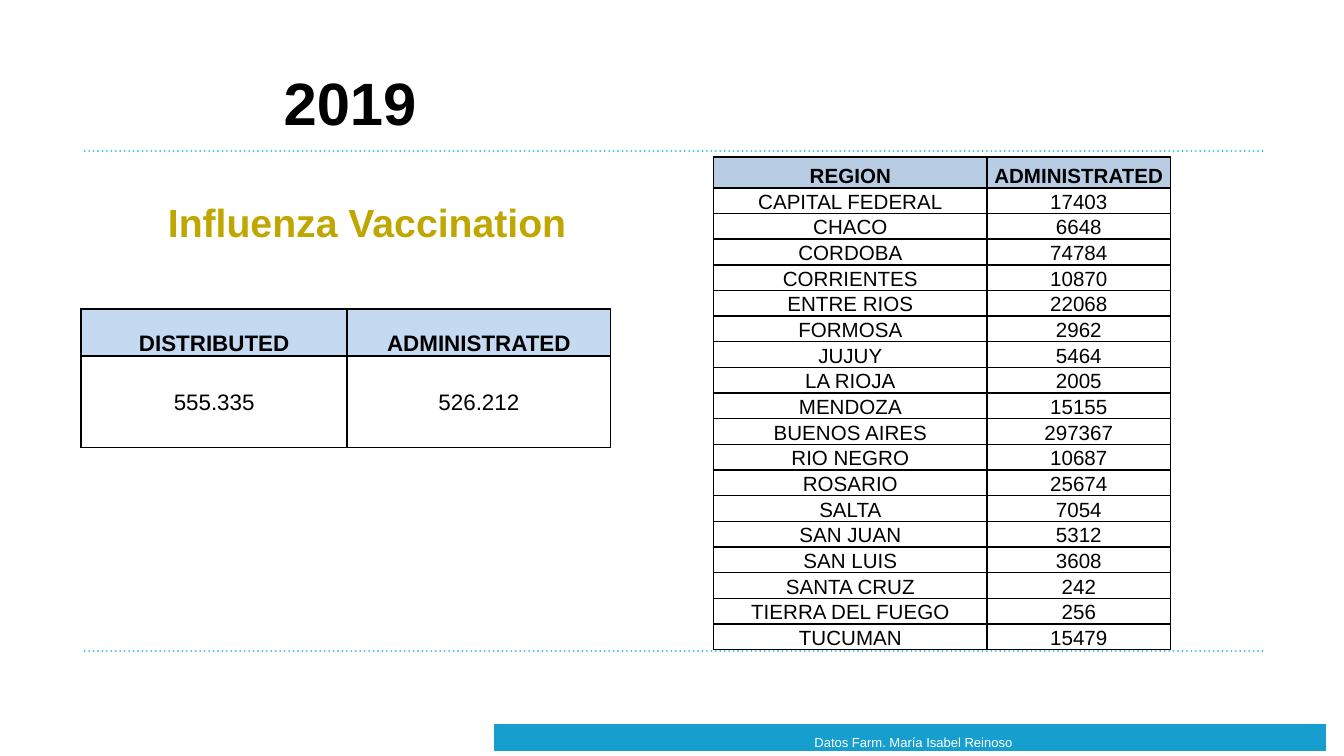
from lxml import etree
from pptx import Presentation
from pptx import util as u
from pptx.dml import color
from pptx.enum import dml, shapes, text
from pptx.oxml import ns

COLORS = {
    "rule": "45C0EB", "gold": "BFA600", "ink": "000000", "paper": "FFFFFF",
    "totals": "C5D9F1", "regions": "B8CCE4", "bar": "169ECE",
}
FONT = "Arial"
WIDTH = u.Inches(10)
HEIGHT = WIDTH * 9 // 16
GRID = WIDTH / 100

TOTALS = [("DISTRIBUTED", "ADMINISTRATED"), ("555.335", "526.212")]
REGIONS = [
    ("REGION", "ADMINISTRATED"),
    ("CAPITAL FEDERAL", "17403"), ("CHACO", "6648"), ("CORDOBA", "74784"),
    ("CORRIENTES", "10870"), ("ENTRE RIOS", "22068"), ("FORMOSA", "2962"),
    ("JUJUY", "5464"), ("LA RIOJA", "2005"), ("MENDOZA", "15155"),
    ("BUENOS AIRES", "297367"), ("RIO NEGRO", "10687"), ("ROSARIO", "25674"),
    ("SALTA", "7054"), ("SAN JUAN", "5312"), ("SAN LUIS", "3608"),
    ("SANTA CRUZ", "242"), ("TIERRA DEL FUEGO", "256"), ("TUCUMAN", "15479"),
]


def units(*lengths):
    return [round(length * GRID) for length in lengths]


def rgb(name):
    return color.RGBColor.from_string(COLORS[name])


def paint(target, name):
    target.fill.solid()
    target.fill.fore_color.rgb = rgb(name)


def write(paragraph, words, size, ink, bold=False):
    run = paragraph.add_run()
    run.text = words
    run.font.name, run.font.size, run.font.bold = FONT, u.Pt(size), bold
    run.font.color.rgb = rgb(ink)


def add_rule(slide, left, top, width):
    x, y, span = units(left, top, width)
    rule = slide.shapes.add_connector(shapes.MSO_CONNECTOR.STRAIGHT, x, y, x + span, y)
    rule.line.color.rgb = rgb("rule")
    rule.line.width = u.Pt(1.2)
    rule.line.dash_style = dml.MSO_LINE.ROUND_DOT
    rule._element.spPr.find(ns.qn("a:ln")).set("cap", "rnd")
    etree.SubElement(rule._element.spPr, ns.qn("a:effectLst"))


def add_year(slide, box):
    year = slide.shapes.title
    year.left, year.top, year.width, year.height = units(*box)
    paint(year, "paper")
    frame = year.text_frame
    frame.word_wrap = False
    frame.auto_size = text.MSO_AUTO_SIZE.SHAPE_TO_FIT_TEXT
    frame.vertical_anchor = text.MSO_ANCHOR.TOP
    frame.paragraphs[0].alignment = text.PP_ALIGN.LEFT
    write(frame.paragraphs[0], "2019", 32, "ink", True)


def add_subject(slide, box):
    frame = slide.shapes.add_textbox(*units(*box)).text_frame
    frame.word_wrap = False
    frame.auto_size = text.MSO_AUTO_SIZE.SHAPE_TO_FIT_TEXT
    write(frame.paragraphs[0], " Influenza Vaccination", 21, "gold", True)


def add_borders(cell):
    properties = cell._tc.get_or_add_tcPr()
    for side in ("lnL", "lnR", "lnT", "lnB"):
        edge = etree.SubElement(properties, ns.qn(f"a:{side}"), w=str(u.Pt(1)))
        fill = etree.SubElement(edge, ns.qn("a:solidFill"))
        etree.SubElement(fill, ns.qn("a:srgbClr"), val=COLORS["ink"])


def add_counts(slide, box, records, first_column, header_height, size, header_fill, body_anchor):
    left, top, width, height = units(*box)
    table = slide.shapes.add_table(len(records), 2, left, top, width, height).table
    split, header = units(first_column, header_height)
    table.columns[0].width, table.columns[1].width = split, width - split
    for row, record in enumerate(records):
        heading = row == 0
        table.rows[row].height = header if heading else (height - header) // (len(records) - 1)
        for column, words in enumerate(record):
            cell = table.cell(row, column)
            add_borders(cell)
            paint(cell, header_fill if heading else "paper")
            cell.margin_left = cell.margin_right = cell.margin_top = u.Pt(0.5)
            cell.margin_bottom = 0
            cell.vertical_anchor = text.MSO_ANCHOR.BOTTOM if heading else body_anchor
            paragraph = cell.text_frame.paragraphs[0]
            paragraph.alignment = text.PP_ALIGN.CENTER
            write(paragraph, words, size, "ink", heading)


def add_credit(slide, box):
    bar = slide.shapes.add_shape(shapes.MSO_SHAPE.RECTANGLE, *units(*box))
    bar.shadow.inherit = False
    paint(bar, "bar")
    bar.line.color.rgb = rgb("bar")
    bar.line.width = u.Pt(1)
    outline = bar._element.spPr.find(ns.qn("a:ln"))
    etree.SubElement(outline, ns.qn("a:miter"), lim="800000")
    bar.text_frame.word_wrap = True
    bar.text_frame.vertical_anchor = text.MSO_ANCHOR.MIDDLE
    paragraph = bar.text_frame.paragraphs[0]
    paragraph.alignment = text.PP_ALIGN.CENTER
    write(paragraph, " ", 13.5, "paper")
    write(paragraph, "Datos Farm. María Isabel Reinoso", 7, "paper")


def main():
    deck = Presentation()
    deck.slide_width, deck.slide_height = WIDTH, HEIGHT
    slide = deck.slides.add_slide(deck.slide_layouts[5])
    for top in (11.23, 48.43):
        add_rule(slide, 6.3, top, 87.8)
    add_subject(slide, (10.7, 14.3, 32.8, 4.5))
    add_year(slide, (20.1, 4.4, 12, 6.4))
    add_counts(slide, (6.04, 23, 39.4, 10.3), TOTALS, 19.8, 3.5, 12, "totals",
               text.MSO_ANCHOR.MIDDLE)
    add_counts(slide, (53.1, 11.67, 34, 36.7), REGIONS, 20.35, 2.3, 11, "regions",
               text.MSO_ANCHOR.BOTTOM)
    add_credit(slide, (36.8, 53.92, 61.8, 1.9))
    deck.save("out.pptx")


if __name__ == "__main__":
    main()
